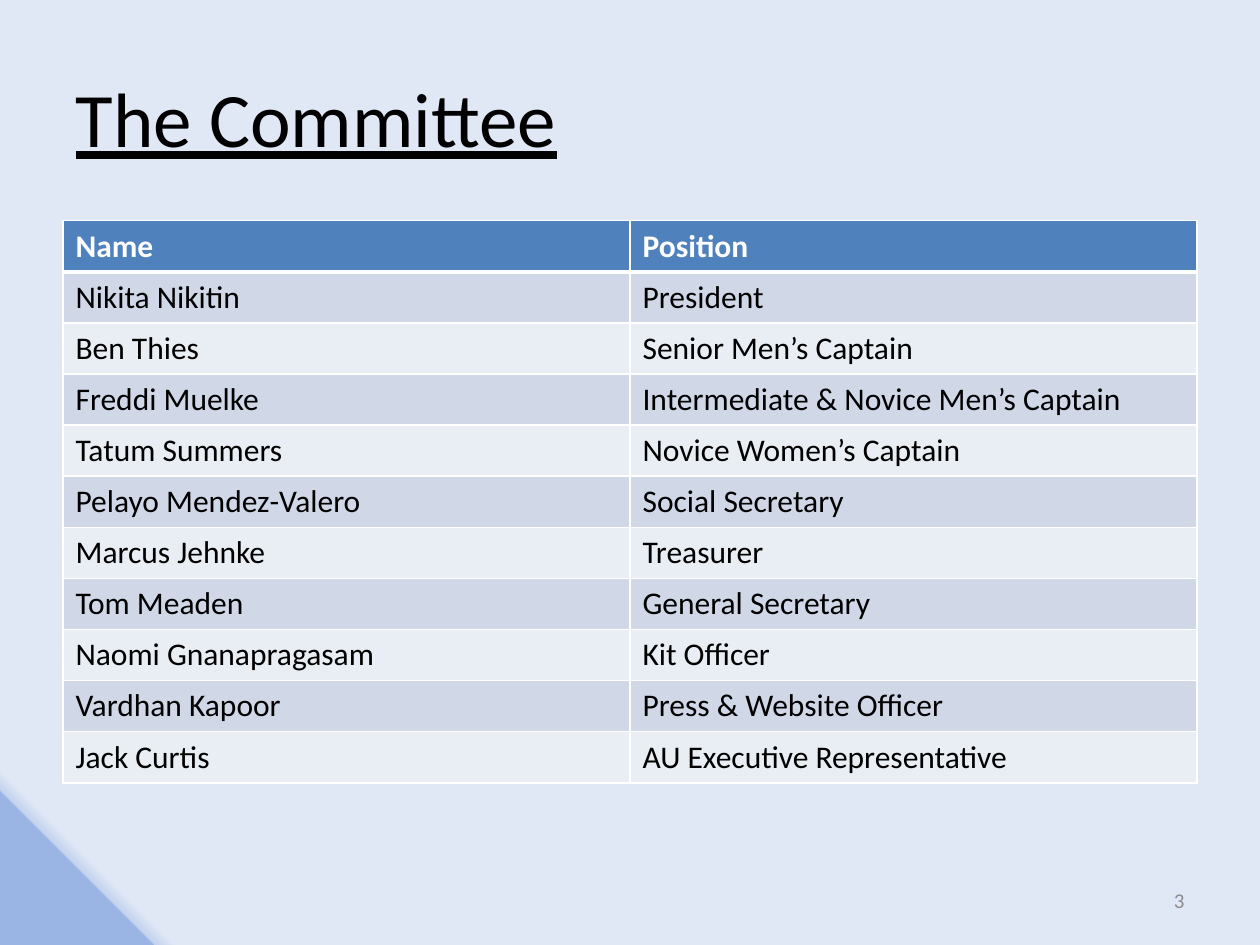
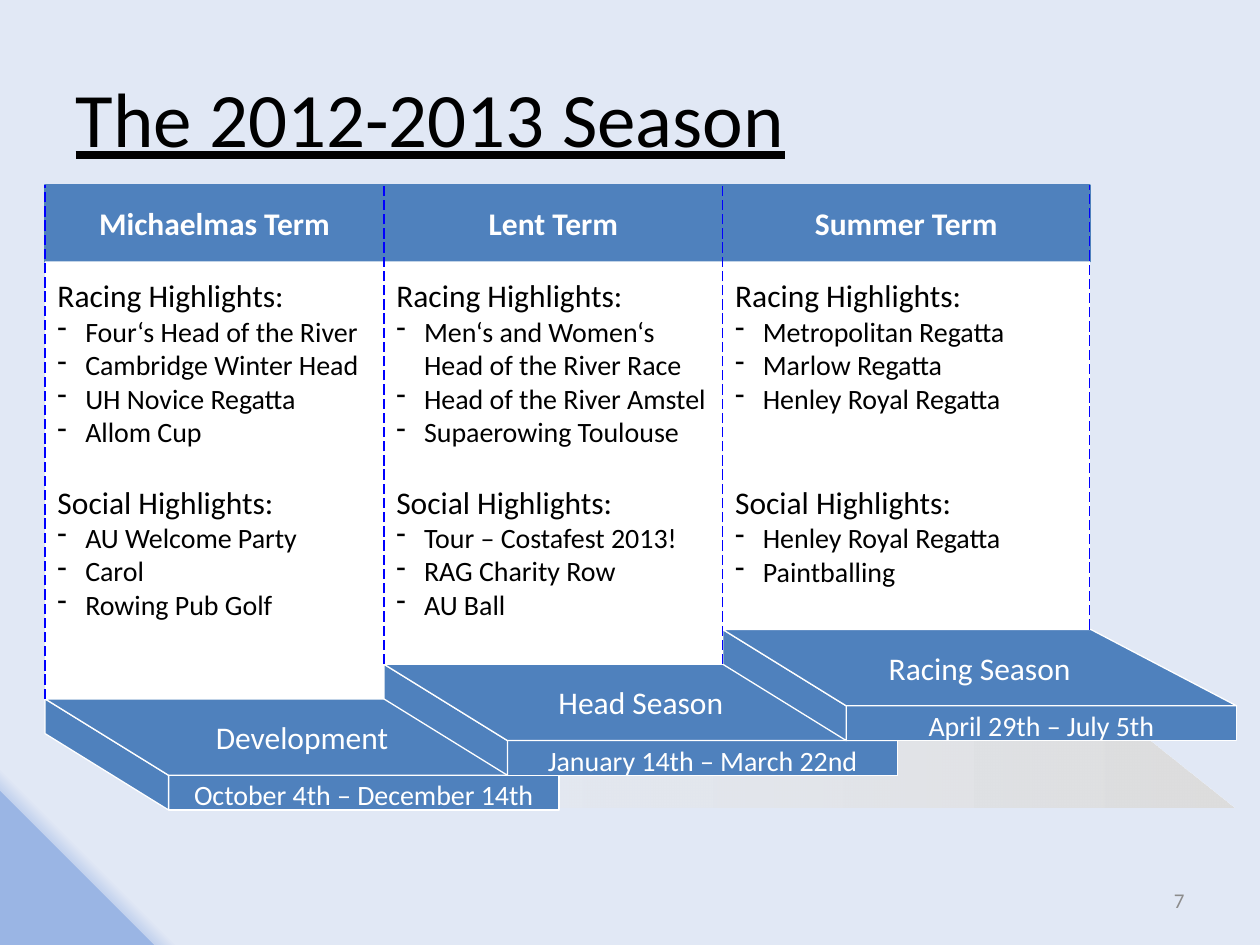
from lxml import etree
from pptx import Presentation
from pptx.dml.color import RGBColor
from pptx.enum import dml, shapes, text
from pptx.oxml.ns import qn
from pptx.util import Cm, Pt

FONT = "Calibri"
BLUE, WHITE, BLACK, GREY = "4F81BD", "FFFFFF", "000000", "8C8C8C"
DASH_BLUE = "0000FF"
BANDS = ("D0D8E8", "E9EDF4")

COMMITTEE = [
    ("Name", "Position"),
    ("Nikita Nikitin", "President"),
    ("Ben Thies", "Senior Men’s Captain"),
    ("Freddi Muelke", "Intermediate & Novice Men’s Captain"),
    ("Tatum Summers", "Novice Women’s Captain"),
    ("Pelayo Mendez-Valero", "Social Secretary"),
    ("Marcus Jehnke", "Treasurer"),
    ("Tom Meaden", "General Secretary"),
    ("Naomi Gnanapragasam", "Kit Officer"),
    ("Vardhan Kapoor", "Press & Website Officer"),
    ("Jack Curtis", "AU Executive Representative"),
]

# term, season, dates, racing, social, free lines between the two lists
TERMS = [
    ("Michaelmas Term", "Development", "October 4th – December 14th",
     ["Four‘s Head of the River", "Cambridge Winter Head",
      "UH Novice Regatta", "Allom Cup"],
     ["AU Welcome Party", "Carol", "Rowing Pub Golf"], 1),
    ("Lent Term", "Head Season", "January 14th – March 22nd",
     ["Men‘s and Women‘s Head of the River Race",
      "Head of the River Amstel", "Supaerowing Toulouse"],
     ["Tour – Costafest 2013!", "RAG Charity Row", "AU Ball"], 1),
    ("Summer Term", "Racing Season", "April 29th – July 5th",
     ["Metropolitan Regatta", "Marlow Regatta", "Henley Royal Regatta"],
     ["Henley Royal Regatta", "Paintballing"], 2),
]

# Season chart, in centimetres
COLUMN_EDGES = (0.91, 7.74, 14.57, 21.97)
HEAD_TOP, HEAD_HEIGHT = 3.73, 1.54
STEP_TOP, STEP_RISE = 14.09, 0.7
STEP_DEPTH, STEP_SHIFT = 1.54, 2.49
FRONT_WIDTH, BACK_WIDTH = 7.87, 7.42
LINE_16PT = 19.5


def color(hex_code):
    return RGBColor.from_string(hex_code)


def style_para(para, size, hex_code, align=text.PP_ALIGN.LEFT, bold=False):
    para.alignment = align
    for span in para.runs:
        font = span.font
        font.name, font.size, font.bold = FONT, Pt(size), bold
        font.color.rgb = color(hex_code)


def set_gradient(owner, fill, stops, angle):
    """Stops are (position in percent, colour, opacity in percent)."""
    fill.gradient()
    gradient = next(owner.element.iter(qn("a:gradFill")))
    stop_list = gradient.find(qn("a:gsLst"))
    for old_stop in list(stop_list):
        stop_list.remove(old_stop)
    for position, hex_code, opacity in stops:
        stop = etree.SubElement(stop_list, qn("a:gs"), pos=str(position * 1000))
        tint = etree.SubElement(stop, qn("a:srgbClr"), val=hex_code)
        if opacity < 100:
            etree.SubElement(tint, qn("a:alpha"), val=str(opacity * 1000))
    gradient.find(qn("a:lin")).set("ang", str(angle * 60000))


def paint(shape, fill, line=None, width=0.75):
    shape.shadow.inherit = False
    shape.fill.solid()
    shape.fill.fore_color.rgb = color(fill)
    if line:
        shape.line.color.rgb = color(line)
        shape.line.width = Pt(width)
    else:
        shape.line.fill.background()


def write(shape, words, size, hex_code, align=text.PP_ALIGN.CENTER,
          anchor=text.MSO_ANCHOR.MIDDLE, bold=False):
    frame = shape.text_frame
    frame.word_wrap = True
    frame.vertical_anchor = anchor
    frame.text = words
    style_para(frame.paragraphs[0], size, hex_code, align, bold)


def add_box(slide, left, top, width, height, fill, line=None, line_width=0.75):
    box = slide.shapes.add_shape(shapes.MSO_SHAPE.RECTANGLE,
                                 Cm(left), Cm(top), Cm(width), Cm(height))
    paint(box, fill, line, line_width)
    return box


def add_face(slide, points):
    corners = [(Cm(x), Cm(y)) for x, y in points]
    builder = slide.shapes.build_freeform(*corners[0])
    builder.add_line_segments(corners[1:], close=True)
    face = builder.convert_to_shape()
    paint(face, BLUE, WHITE)
    return face


def add_titled_slide(deck, title, number):
    slide = deck.slides.add_slide(deck.slide_layouts[5])
    heading = slide.shapes.title
    heading.left, heading.top = Cm(1.27), Cm(0.76)
    heading.width, heading.height = Cm(22.86), Cm(3.18)
    write(heading, title, 44, BLACK, text.PP_ALIGN.LEFT)
    heading.text_frame.paragraphs[0].runs[0].font.underline = True
    footer = slide.shapes.add_textbox(Cm(18.2), Cm(17.65), Cm(5.93), Cm(1.01))
    write(footer, str(number), 12, GREY, text.PP_ALIGN.RIGHT)
    return slide


def set_borders(cell, bottom=1, top=1):
    properties = cell._tc.get_or_add_tcPr()
    widths = {"lnL": 1, "lnR": 1, "lnT": top, "lnB": bottom}
    for index, (side, width) in enumerate(widths.items()):
        line = etree.Element(qn(f"a:{side}"), w=str(Pt(width)))
        fill = etree.SubElement(line, qn("a:solidFill"))
        etree.SubElement(fill, qn("a:srgbClr"), val=WHITE)
        properties.insert(index, line)


def add_committee_table(slide):
    row_height = Cm(1.03)
    table = slide.shapes.add_table(
        len(COMMITTEE), 2, Cm(1.27), Cm(4.45), Cm(22.86),
        row_height * len(COMMITTEE)).table
    for row_index, entries in enumerate(COMMITTEE):
        is_head = row_index == 0
        table.rows[row_index].height = row_height
        for column_index, words in enumerate(entries):
            cell = table.cell(row_index, column_index)
            cell.text = words
            style_para(cell.text_frame.paragraphs[0], 18,
                       WHITE if is_head else BLACK, bold=is_head)
            cell.fill.solid()
            cell.fill.fore_color.rgb = color(
                BLUE if is_head else BANDS[(row_index - 1) % 2])
            set_borders(cell, bottom=3 if is_head else 1,
                        top=3 if row_index == 1 else 1)


def add_floor_shadow(slide):
    shadow = slide.shapes.add_shape(shapes.MSO_SHAPE.PARALLELOGRAM,
                                    Cm(3.84), Cm(14.58), Cm(21.05), Cm(1.7))
    shadow.adjustments[0] = 1.265
    shadow.shadow.inherit = False
    shadow.line.fill.background()
    set_gradient(shadow, shadow.fill,
                 [(0, "DDDDDD", 100), (100, "EDEDED", 0)], 0)
    shadow.element.spPr.find(qn("a:xfrm")).set("flipH", "1")


def add_step(slide, left, top, season, dates):
    front_left, front_top = left + STEP_SHIFT, top + STEP_DEPTH
    front = add_box(slide, front_left, front_top, FRONT_WIDTH, STEP_RISE,
                    BLUE, WHITE)
    write(front, dates, 16, WHITE, anchor=text.MSO_ANCHOR.TOP)
    front.text_frame.margin_top = Cm(0.05)
    add_face(slide, [(front_left, front_top),
                     (front_left, front_top + STEP_RISE),
                     (left, top + STEP_RISE), (left, top)])
    tread = add_face(slide, [(front_left, front_top),
                             (front_left + FRONT_WIDTH, front_top),
                             (left + BACK_WIDTH, top), (left, top)])
    write(tread, season, 18, WHITE)


def make_bullet(para):
    properties = para._p.get_or_add_pPr()
    properties.set("marL", str(Cm(0.56)))
    properties.set("indent", str(-Cm(0.56)))
    etree.SubElement(properties, qn("a:buChar"), char="-")


def add_highlights(slide, left, width, bottom, racing, social, free_lines):
    top = HEAD_TOP + HEAD_HEIGHT
    box = add_box(slide, left, top, width, bottom - top, WHITE)
    frame = box.text_frame
    frame.word_wrap = True
    frame.vertical_anchor = text.MSO_ANCHOR.TOP
    frame.margin_top = Cm(0.3)
    headings = ("Racing Highlights:", "Social Highlights:")
    frame.text = "\n".join([headings[0], *racing, headings[1], *social])
    for para in frame.paragraphs:
        is_heading = para.text in headings
        style_para(para, 18 if is_heading else 16, BLACK)
        if para.text == headings[1]:
            para.space_before = Pt(free_lines * LINE_16PT)
        if not is_heading:
            make_bullet(para)


def add_dashed_line(slide, x, bottom):
    line = slide.shapes.add_connector(shapes.MSO_CONNECTOR.STRAIGHT,
                                      Cm(x), Cm(bottom), Cm(x), Cm(HEAD_TOP))
    line.line.color.rgb = color(DASH_BLUE)
    line.line.width = Pt(0.75)
    line.line.dash_style = dml.MSO_LINE.LONG_DASH
    etree.SubElement(line.element.spPr, qn("a:effectLst"))


def add_season_chart(slide):
    add_floor_shadow(slide)
    step_tops = [STEP_TOP - STEP_RISE * index for index in range(len(TERMS))]
    columns = [(left, right - left, top) for left, right, top
               in zip(COLUMN_EDGES, COLUMN_EDGES[1:], step_tops)]
    for (left, _, top), (_, season, dates, *_) in zip(columns, TERMS):
        add_step(slide, left, top, season, dates)
    for (left, width, _), (term, *_) in zip(columns, TERMS):
        head = add_box(slide, left, HEAD_TOP, width, HEAD_HEIGHT,
                       BLUE, BLUE, 1.5)
        write(head, term, 18, WHITE, bold=True)
    for (left, width, top), (_, _, _, *highlights) in zip(columns, TERMS):
        add_highlights(slide, left, width, top, *highlights)
    for x, step in zip(COLUMN_EDGES, (0, 1, 1, 2)):
        add_dashed_line(slide, x, step_tops[step])


def main():
    deck = Presentation()
    deck.slide_width, deck.slide_height = Cm(25.4), Cm(19.05)
    master = deck.slide_master
    set_gradient(master, master.background.fill,
                 [(7, "9AB5E4", 100), (7, "C2D1ED", 100), (8, "E1E8F5", 100)],
                 315)
    add_committee_table(add_titled_slide(deck, "The Committee", 3))
    add_season_chart(add_titled_slide(deck, "The 2012-2013 Season", 7))
    deck.save("out.pptx")


if __name__ == "__main__":
    main()
